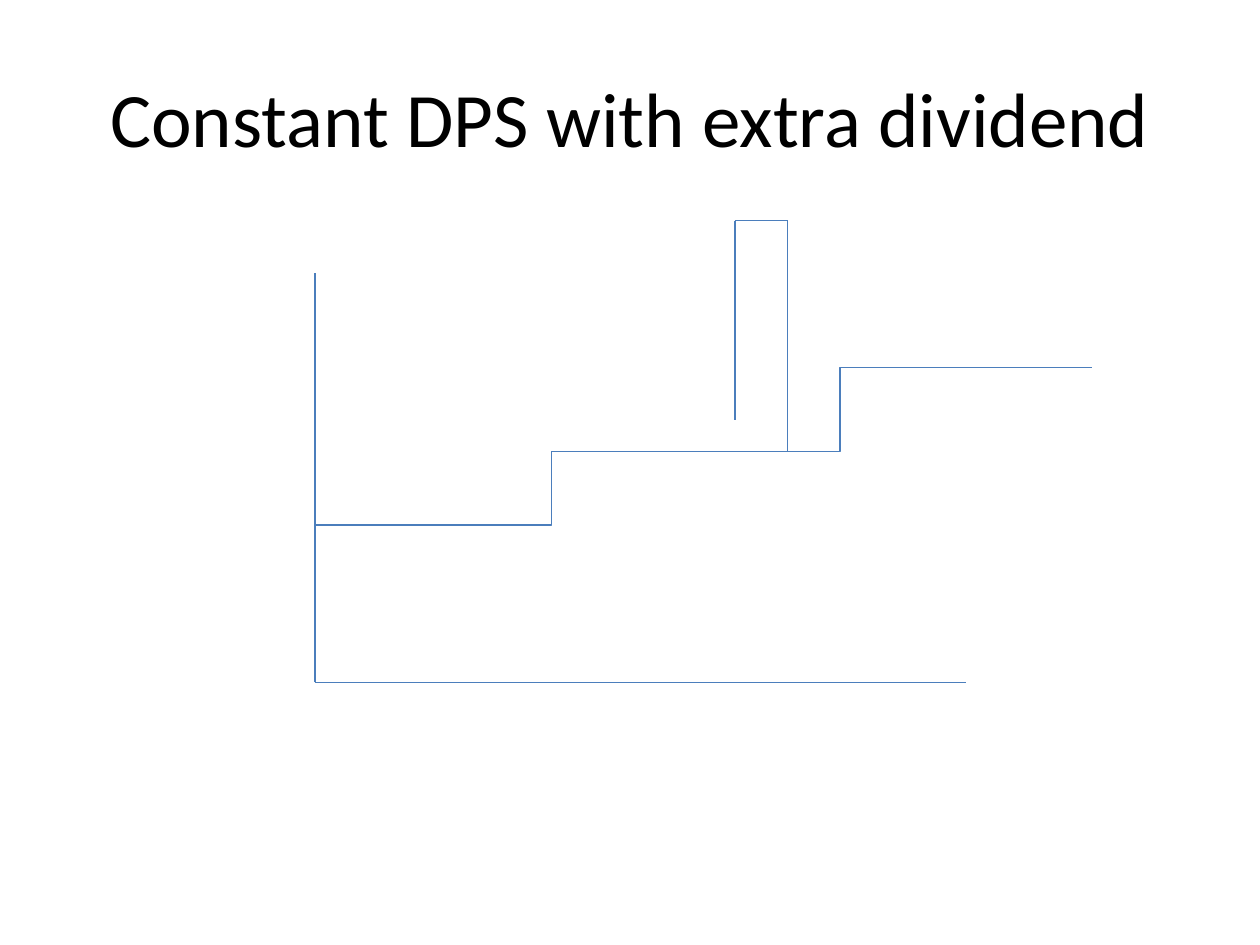
from dataclasses import dataclass

from lxml.etree import SubElement
from pptx import Presentation
from pptx.dml.color import RGBColor
from pptx.enum.shapes import MSO_CONNECTOR as Connector
from pptx.enum.text import MSO_ANCHOR as Anchor, PP_ALIGN as Align
from pptx.oxml.ns import qn
from pptx.util import Pt

PX = 7620


@dataclass(frozen=True)
class Theme:
    font: str = "Calibri"
    title_size: int = 44
    title_color: str = "000000"
    background: str = "FFFFFF"
    line_color: str = "4B7EBC"
    line_width: float = 0.75


class Page:
    def __init__(self, deck, theme):
        self.theme = theme
        self.slide = deck.slides.add_slide(deck.slide_layouts[5])
        fill = self.slide.background.fill
        fill.solid()
        fill.fore_color.rgb = RGBColor.from_string(theme.background)

    def title(self, text, left, top, width, height):
        box = self.slide.shapes.title
        box.left, box.top = left * PX, top * PX
        box.width, box.height = width * PX, height * PX
        frame = box.text_frame
        frame.text = text
        frame.word_wrap = True
        frame.vertical_anchor = Anchor.MIDDLE
        para = frame.paragraphs[0]
        para.alignment = Align.CENTER
        font = para.runs[0].font
        font.name = self.theme.font
        font.size = Pt(self.theme.title_size)
        font.color.rgb = RGBColor.from_string(self.theme.title_color)

    def line(self, start, end, kind=Connector.STRAIGHT):
        ends = [value * PX for value in (*start, *end)]
        connector = self.slide.shapes.add_connector(kind, *ends)
        connector.line.color.rgb = RGBColor.from_string(self.theme.line_color)
        connector.line.width = Pt(self.theme.line_width)
        SubElement(connector._element.spPr, qn("a:effectLst"))

    def step(self, start, end):
        self.line(start, end, Connector.ELBOW)

    def path_lines(self, points):
        for start, end in zip(points, points[1:]):
            self.line(start, end)


def main():
    deck = Presentation()
    deck.slide_width, deck.slide_height = 1200 * PX, 900 * PX
    page = Page(deck, Theme())
    page.title("Constant DPS with extra dividend", 60, 36, 1080, 150)

    origin = (300, 650)
    page.line(origin, (920, 650))
    page.line(origin, (300, 260))

    extra_end = (750, 430)
    page.step((300, 500), extra_end)
    page.step(extra_end, (850, 350))
    page.line((830, 350), (1040, 350))
    page.path_lines([(700, 400), (700, 210), (750, 210), extra_end])

    deck.save("out.pptx")


if __name__ == "__main__":
    main()
